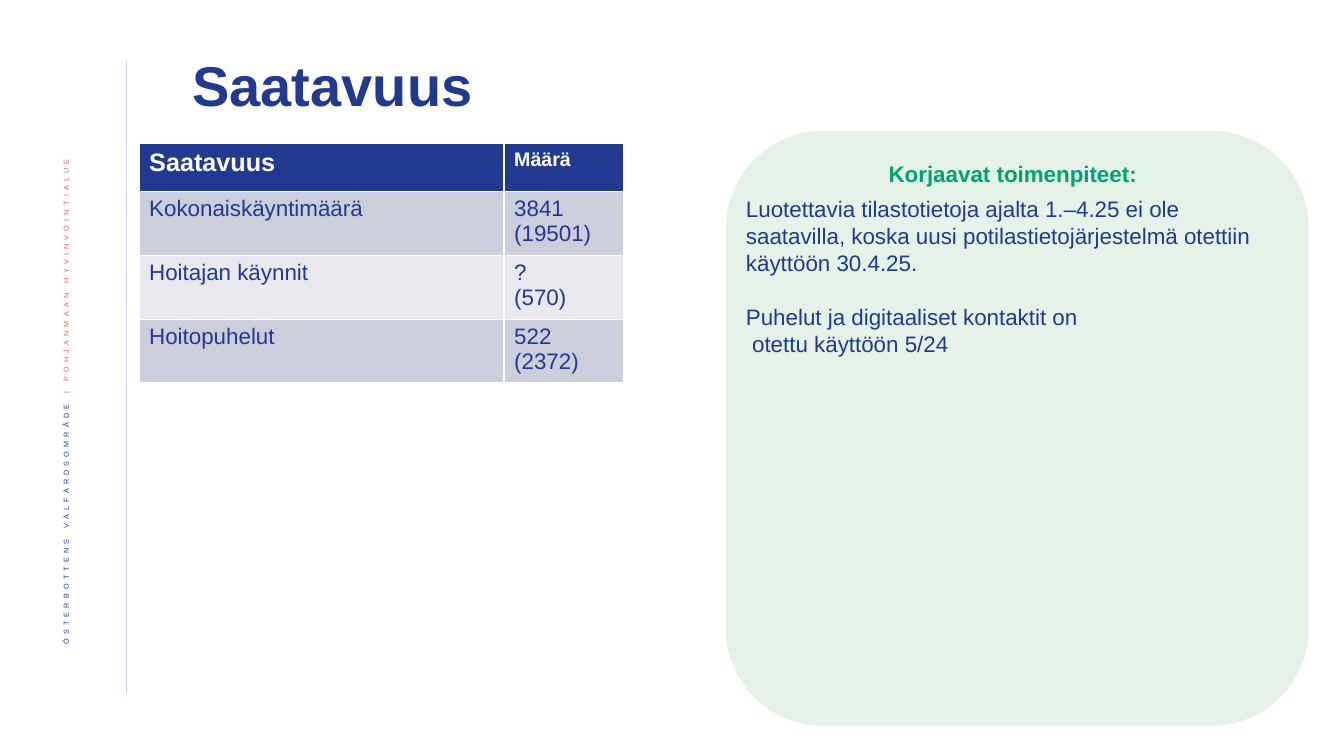
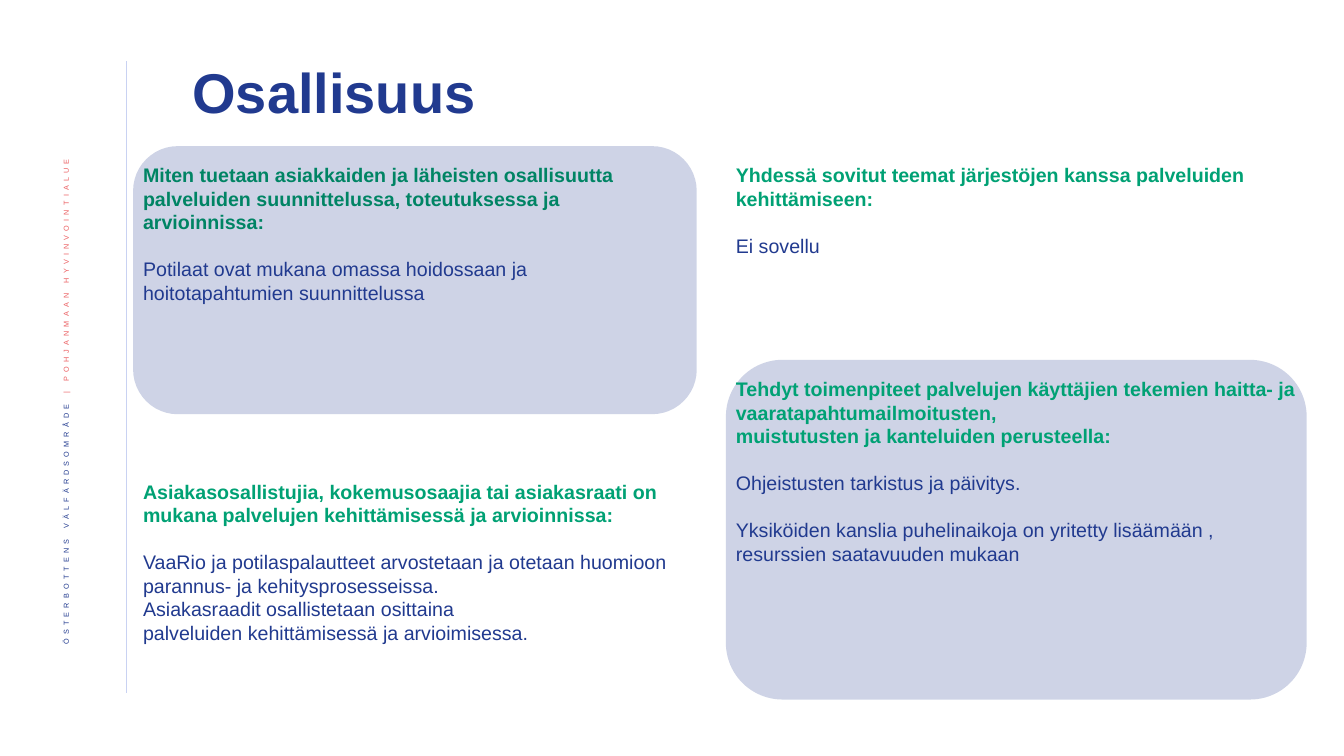
from dataclasses import dataclass

from lxml import etree
from pptx import Presentation
from pptx.dml.color import RGBColor
from pptx.enum.shapes import MSO_CONNECTOR, MSO_SHAPE
from pptx.enum.text import MSO_ANCHOR, PP_ALIGN
from pptx.oxml.ns import qn
from pptx.slide import Slide
from pptx.text.text import TextFrame, _Paragraph
from pptx.util import Inches, Pt

STRAIGHT = MSO_CONNECTOR.STRAIGHT
ROUNDED = MSO_SHAPE.ROUNDED_RECTANGLE
TOP, MIDDLE = MSO_ANCHOR.TOP, MSO_ANCHOR.MIDDLE
LEFT, CENTER, RIGHT = PP_ALIGN.LEFT, PP_ALIGN.CENTER, PP_ALIGN.RIGHT

NAVY = RGBColor(0x21, 0x3A, 0x8F)
CORAL = RGBColor(0xEB, 0x5C, 0x5F)
GREEN = RGBColor(0x00, 0xA1, 0x74)
DARK_GREEN = RGBColor(0x00, 0x84, 0x64)
MINT = RGBColor(0x85, 0xC5, 0x98)
PALE_BLUE = RGBColor(0xC9, 0xD2, 0xF2)
WHITE = RGBColor(0xFF, 0xFF, 0xFF)
ROW_FILLS = (RGBColor(0xCD, 0xCE, 0xDB), RGBColor(0xE8, 0xE8, 0xEE))

FONT = "Arial"
LINE_FACTOR = 1.2
PANEL_OPACITY = 22


@dataclass(frozen=True)
class Box:
    left: float
    top: float
    width: float
    height: float

    def emu(self) -> tuple[int, int, int, int]:
        return (Inches(self.left), Inches(self.top),
                Inches(self.width), Inches(self.height))


@dataclass(frozen=True)
class Para:
    text: str
    heading: bool = False
    gap: bool = False


@dataclass(frozen=True)
class Block:
    box: Box
    paras: tuple[Para, ...]
    size: int = 14
    heading_color: RGBColor = GREEN
    heading_align: PP_ALIGN = LEFT
    heading_after: int = 0


@dataclass(frozen=True)
class Panel:
    box: Box
    color: RGBColor


TABLE_BOX = Box(1.38, 1.42, 4.81, 2.19)
COLUMN_WIDTHS = (3.62, 1.19)
ROW_HEIGHTS = (0.48, 0.57, 0.57, 0.57)
HEADER_SIZES = (18, 14)
ACCESS_ROWS = (
    ("Saatavuus", "Määrä"),
    ("Kokonaiskäyntimäärä", "3841 (19501)"),
    ("Hoitajan käynnit", "?\n(570)"),
    ("Hoitopuhelut", "522 (2372)"),
)

ACCESS_PANELS = (Panel(Box(7.2, 1.3, 5.78, 5.9), MINT),)
ACCESS_BLOCKS = (
    Block(
        Box(7.3, 1.54, 5.49, 2.37),
        (
            Para("Korjaavat toimenpiteet:", heading=True),
            Para("Luotettavia tilastotietoja ajalta 1.–4.25 ei ole saatavilla, "
                 "koska uusi potilastietojärjestelmä otettiin käyttöön 30.4.25."),
            Para("Puhelut ja digitaaliset kontaktit on", gap=True),
            Para(" otettu käyttöön 5/24"),
        ),
        size=16, heading_align=CENTER, heading_after=6,
    ),
)

INCLUSION_PANELS = (
    Panel(Box(1.32, 1.45, 5.59, 2.66), NAVY),
    Panel(Box(7.2, 3.57, 5.76, 3.37), NAVY),
)
INCLUSION_BLOCKS = (
    Block(
        Box(1.32, 1.57, 5.59, 1.51),
        (
            Para("Miten tuetaan asiakkaiden ja läheisten osallisuutta palveluiden "
                 "suunnittelussa, toteutuksessa ja arvioinnissa:", heading=True),
            Para("Potilaat ovat mukana omassa hoidossaan ja", gap=True),
            Para("hoitotapahtumien suunnittelussa"),
        ),
        heading_color=DARK_GREEN,
    ),
    Block(
        Box(7.2, 1.57, 5.76, 1.04),
        (
            Para("Yhdessä sovitut teemat järjestöjen kanssa palveluiden "
                 "kehittämiseen:", heading=True),
            Para("Ei sovellu", gap=True),
        ),
    ),
    Block(
        Box(1.32, 4.71, 5.59, 1.75),
        (
            Para("Asiakasosallistujia, kokemusosaajia tai asiakasraati on mukana "
                 "palvelujen kehittämisessä ja arvioinnissa:", heading=True),
            Para("VaaRio ja potilaspalautteet arvostetaan ja otetaan huomioon "
                 "parannus- ja kehitysprosesseissa.", gap=True),
            Para("Asiakasraadit osallistetaan osittaina"),
            Para("palveluiden kehittämisessä ja arvioimisessa."),
        ),
    ),
    Block(
        Box(7.2, 3.69, 5.76, 2.22),
        (
            Para("Tehdyt toimenpiteet palvelujen käyttäjien tekemien haitta- ja "
                 "vaaratapahtumailmoitusten,", heading=True),
            Para("muistutusten ja kanteluiden perusteella:", heading=True),
            Para("Ohjeistusten tarkistus ja päivitys.", gap=True),
            Para("Yksiköiden kanslia puhelinaikoja on yritetty lisäämään , "
                 "resurssien saatavuuden mukaan", gap=True),
        ),
    ),
)


def add_run(p: _Paragraph, text: str, *, size: float, color: RGBColor = NAVY,
            bold: bool = False, baseline: int = 0, tracking: float = 0) -> None:
    r = p.add_run()
    r.text = text
    r.font.name = FONT
    r.font.size = Pt(size)
    r.font.bold = bold
    r.font.color.rgb = color
    props = r.font._element
    if baseline:
        props.set("baseline", str(baseline * 1000))
    if tracking:
        props.set("spc", str(int(tracking * 100)))


def add_text_frame(s: Slide, box: Box, anchor: MSO_ANCHOR = TOP) -> TextFrame:
    tf = s.shapes.add_textbox(*box.emu()).text_frame
    tf.word_wrap = True
    tf.vertical_anchor = anchor
    return tf


def next_paragraph(tf: TextFrame, index: int) -> _Paragraph:
    return tf.add_paragraph() if index else tf.paragraphs[0]


def add_frame(s: Slide) -> None:
    rule = s.shapes.add_connector(
        STRAIGHT, Inches(1.25), Inches(0.61), Inches(1.25), Inches(6.88))
    rule.line.color.rgb = PALE_BLUE
    rule.line.width = Pt(0.5)
    etree.SubElement(rule._element.spPr, qn("a:effectLst"))

    tf = add_text_frame(s, Box(0.42, 1.42, 0.52, 5.73), MIDDLE)
    tf._txBody.bodyPr.set("vert", "vert270")
    p = tf.paragraphs[0]
    p.alignment = RIGHT
    p.line_spacing = 0.9
    for text, color in (("ÖSTERBOTTENS VÄLFÄRDSOMRÅDE ", NAVY),
                        ("| POHJANMAAN HYVINVOINTIALUE ", CORAL)):
        add_run(p, text, size=9, color=color, baseline=30, tracking=3)


def add_title(s: Slide, text: str, height: float) -> None:
    tf = add_text_frame(s, Box(1.81, 0.45, 9.98, height), MIDDLE)
    p = tf.paragraphs[0]
    p.line_spacing = 0.9
    add_run(p, text, size=40, bold=True)


def add_panel(s: Slide, panel: Panel) -> None:
    sp = s.shapes.add_shape(ROUNDED, *panel.box.emu())
    sp.shadow.inherit = False
    sp.line.fill.background()
    sp.fill.solid()
    sp.fill.fore_color.rgb = panel.color
    color = sp._element.spPr.find(qn("a:solidFill")).find(qn("a:srgbClr"))
    etree.SubElement(color, qn("a:alpha"), val=str(PANEL_OPACITY * 1000))


def add_block(s: Slide, block: Block) -> None:
    tf = add_text_frame(s, block.box)
    line = Pt(block.size * LINE_FACTOR)
    for i, para in enumerate(block.paras):
        p = next_paragraph(tf, i)
        p.line_spacing = line
        if para.gap:
            p.space_before = line
        if para.heading:
            p.alignment = block.heading_align
            p.space_after = Pt(block.heading_after)
        add_run(p, para.text, size=block.size, bold=para.heading,
                color=block.heading_color if para.heading else NAVY)


def add_access_table(s: Slide) -> None:
    table = s.shapes.add_table(
        len(ACCESS_ROWS), len(COLUMN_WIDTHS), *TABLE_BOX.emu()).table
    for column, width in zip(table.columns, COLUMN_WIDTHS):
        column.width = Inches(width)
    for i, (row, height) in enumerate(zip(ACCESS_ROWS, ROW_HEIGHTS)):
        table.rows[i].height = Inches(height)
        header = i == 0
        for j, text in enumerate(row):
            cell = table.cell(i, j)
            cell.fill.solid()
            cell.fill.fore_color.rgb = NAVY if header else ROW_FILLS[(i - 1) % 2]
            for k, line in enumerate(text.split("\n")):
                add_run(next_paragraph(cell.text_frame, k), line,
                        size=HEADER_SIZES[j] if header else 16,
                        color=WHITE if header else NAVY, bold=header)


def add_content_slide(prs: Presentation, title: str, title_height: float,
                      panels: tuple[Panel, ...],
                      blocks: tuple[Block, ...]) -> Slide:
    s = prs.slides.add_slide(prs.slide_layouts[6])
    add_frame(s)
    add_title(s, title, title_height)
    for panel in panels:
        add_panel(s, panel)
    for block in blocks:
        add_block(s, block)
    return s


def main() -> None:
    prs = Presentation()
    prs.slide_width = Inches(13.33)
    prs.slide_height = Inches(7.5)
    s = add_content_slide(prs, "Saatavuus", 0.85, ACCESS_PANELS, ACCESS_BLOCKS)
    add_access_table(s)
    add_content_slide(prs, "Osallisuus", 0.99, INCLUSION_PANELS, INCLUSION_BLOCKS)
    prs.save("out.pptx")


if __name__ == "__main__":
    main()
